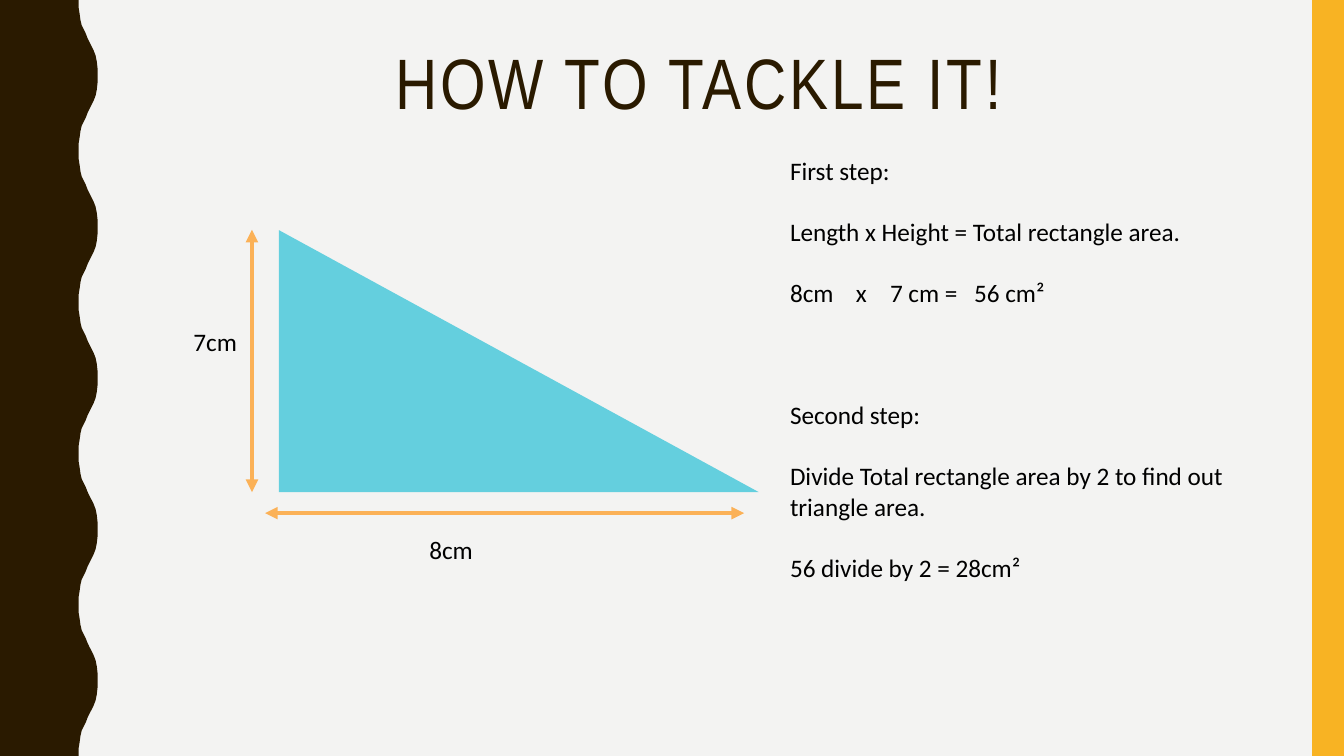
"""Build the slide on finding the area of a triangle."""
from lxml.etree import SubElement
from pptx import Presentation
from pptx.dml.color import RGBColor
from pptx.enum.shapes import MSO_CONNECTOR as Link, MSO_SHAPE as Kind
from pptx.enum.text import MSO_ANCHOR as Anchor, PP_ALIGN as Align
from pptx.oxml.ns import qn
from pptx.util import Cm, Pt


def paint(shape, color):
    shape.shadow.inherit = False
    shape.fill.solid()
    shape.fill.fore_color.rgb = RGBColor.from_string(color)
    shape.line.fill.background()


def write(par, text, size=18, face="Calibri", color="000000"):
    run = par.add_run()
    run.text = text
    run.font.size = Pt(size)
    run.font.name = face
    run.font.color.rgb = RGBColor.from_string(color)
    return run


deck = Presentation()
deck.slide_width, deck.slide_height = Cm(33.87), Cm(19.05)
slide = deck.slides.add_slide(deck.slide_layouts[5])
slide.background.fill.solid()
slide.background.fill.fore_color.rgb = RGBColor.from_string("F3F3F2")
shapes = slide.shapes

wave = 3.81
curve = [(1.98, 0), (1.98, 0.18), (2.01, 0.36), (2.03, 0.51), (2.06, 0.64),
         (2.11, 0.74), (2.16, 0.84), (2.21, 0.97), (2.26, 1.07), (2.31, 1.17),
         (2.36, 1.27), (2.41, 1.4), (2.44, 1.55), (2.46, 1.73), (2.46, 1.9)]
curve += [(x, wave - y) for x, y in reversed(curve[:-1])]
edge = [(Cm(x), Cm(n * wave + y)) for n in range(5) for x, y in curve]
pen = shapes.build_freeform(0, 0)
pen.add_line_segments(edge + [(0, Cm(19.05))], close=True)
paint(pen.convert_to_shape(), "2A1A00")

bar = shapes.add_shape(Kind.RECTANGLE, Cm(33.07), 0, Cm(0.8), Cm(19.05))
paint(bar, "F8B323")

title = shapes.title
title.left, title.top = Cm(3.48), Cm(1.07)
title.width, title.height = Cm(28.27), Cm(4.14)
title.text_frame.vertical_anchor = Anchor.TOP
head = title.text_frame.paragraphs[0]
head.alignment = Align.CENTER
head.line_spacing = 0.9
run = write(head, "HOW TO TACKLE IT!", 51, "Arial Narrow", "2A1A00")
run.font._element.set("spc", "200")

area = shapes.add_shape(Kind.RIGHT_TRIANGLE, Cm(7.03), Cm(5.8), Cm(12.09), Cm(6.6))
paint(area, "64CFDE")

for ends in [(6.35, 5.79, 6.35, 12.4), (18.75, 12.93, 6.68, 12.93)]:
    arrow = shapes.add_connector(Link.STRAIGHT, *map(Cm, ends))
    arrow.line.width = Pt(3)
    arrow.line.color.rgb = RGBColor.from_string("FBB157")
    for tip in ("a:headEnd", "a:tailEnd"):
        SubElement(arrow.line._ln, qn(tip), type="triangle")
    SubElement(arrow._element.spPr, qn("a:effectLst"))

steps = [("First step:", 0),
         ("Length x Height = Total rectangle area.", 22),
         ("8cm\tx\t7 cm =\t56 cm²", 22),
         ("Second step:", 66),
         ("Divide Total rectangle area by 2 to find out triangle area.", 22),
         ("56 divide by 2 = 28cm²", 22)]
notes = [((4.17, 8.1, 2.51, 1.03), Align.CENTER, [("7cm", 0)]),
         ((10.57, 13.34, 4.98, 1.8), Align.LEFT, [("8cm", 0)]),
         ((19.66, 3.78, 11.81, 11.89), Align.LEFT, steps)]
for place, align, lines in notes:
    frame = shapes.add_textbox(*map(Cm, place)).text_frame
    frame.word_wrap = True
    for n, (text, gap) in enumerate(lines):
        par = frame.add_paragraph() if n else frame.paragraphs[0]
        par.alignment = align
        par.space_before = Pt(gap)
        write(par, text)
        if "\t" in text:
            tabs = SubElement(par._p.get_or_add_pPr(), qn("a:tabLst"))
            for stop in (1.66, 2.52, 4.64):
                SubElement(tabs, qn("a:tab"), pos=str(Cm(stop)), algn="l")

deck.save("out.pptx")
